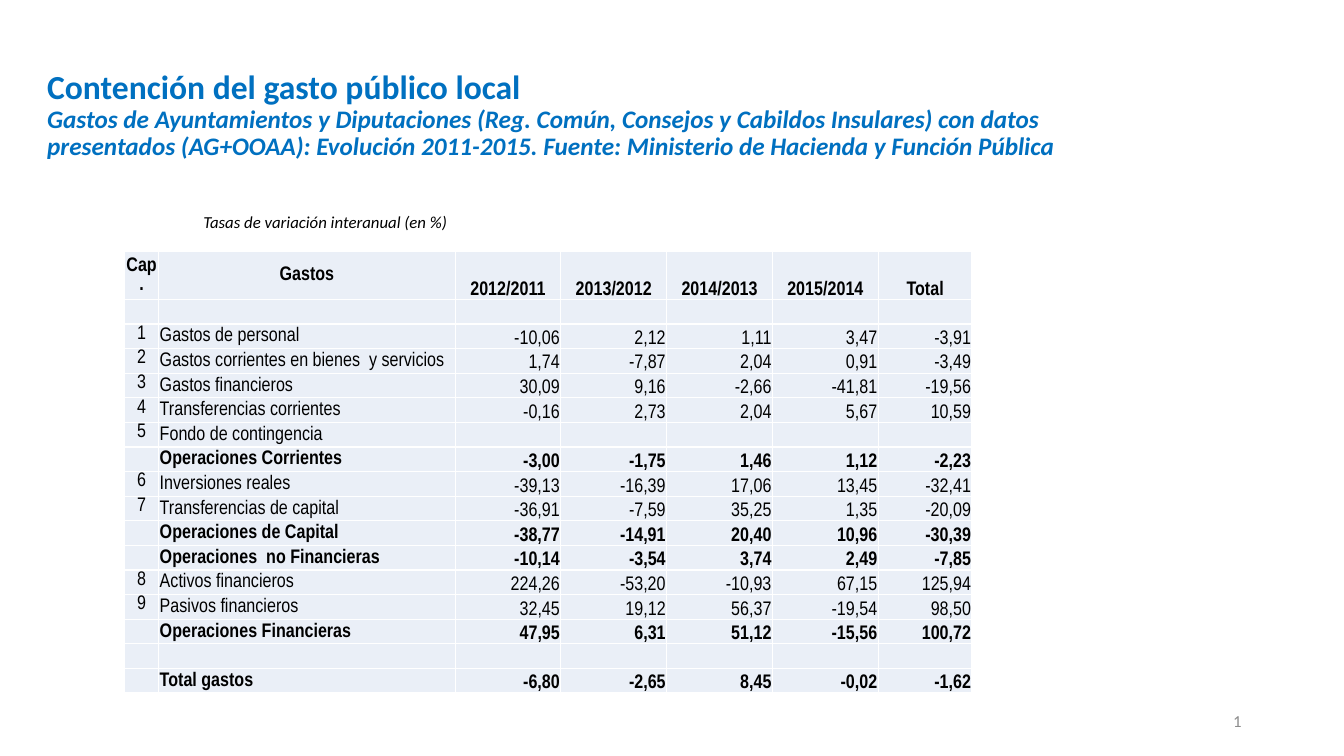
import pptx
import pptx.dml.color
import pptx.enum.text
import pptx.oxml
import pptx.oxml.ns
import pptx.util
from lxml import etree

Pt = pptx.util.Pt
RGBColor = pptx.dml.color.RGBColor
ALIGN = pptx.enum.text.PP_ALIGN
ANCHOR = pptx.enum.text.MSO_ANCHOR

BLUE = RGBColor(0x00, 0x70, 0xC0)
BLACK = RGBColor(0x00, 0x00, 0x00)
GREY = RGBColor(0x8C, 0x8C, 0x8C)
WHITE = RGBColor(0xFF, 0xFF, 0xFF)
PALE = RGBColor(0xEA, 0xEF, 0xF7)

TITLE = "Contención del gasto público local"
SUBTITLE = (
    "Gastos de Ayuntamientos y Diputaciones (Reg. Común, Consejos y Cabildos "
    "Insulares) con datos presentados (AG+OOAA): Evolución 2011-2015. "
    "Fuente: Ministerio de Hacienda y Función Pública"
)
HEADINGS = ["Cap.", "Gastos", "2012/2011", "2013/2012", "2014/2013", "2015/2014", "Total"]
BLANK = [""] * len(HEADINGS)
EXPENSES = [
    ["1", "Gastos de personal", "-10,06", "2,12", "1,11", "3,47", "-3,91"],
    ["2", "Gastos corrientes en bienes  y servicios", "1,74", "-7,87", "2,04", "0,91", "-3,49"],
    ["3", "Gastos financieros", "30,09", "9,16", "-2,66", "-41,81", "-19,56"],
    ["4", "Transferencias corrientes", "-0,16", "2,73", "2,04", "5,67", "10,59"],
    ["5", "Fondo de contingencia", "", "", "", "", ""],
    ["", "Operaciones Corrientes", "-3,00", "-1,75", "1,46", "1,12", "-2,23"],
    ["6", "Inversiones reales", "-39,13", "-16,39", "17,06", "13,45", "-32,41"],
    ["7", "Transferencias de capital", "-36,91", "-7,59", "35,25", "1,35", "-20,09"],
    ["", "Operaciones de Capital", "-38,77", "-14,91", "20,40", "10,96", "-30,39"],
    ["", "Operaciones  no Financieras", "-10,14", "-3,54", "3,74", "2,49", "-7,85"],
    ["8", "Activos financieros", "224,26", "-53,20", "-10,93", "67,15", "125,94"],
    ["9", "Pasivos financieros", "32,45", "19,12", "56,37", "-19,54", "98,50"],
    ["", "Operaciones Financieras", "47,95", "6,31", "51,12", "-15,56", "100,72"],
    BLANK,
    ["", "Total gastos", "-6,80", "-2,65", "8,45", "-0,02", "-1,62"],
]
COLUMN_WIDTHS = [24.5, 211.7, 75.6, 75.6, 75.6, 75.6, 67]
HEADER_HEIGHT, ROW_HEIGHT = 34, 17.6


class ReportSlide:
    text_font = "Calibri"
    table_font = "Arial Narrow"
    table_size = 14

    def __init__(self, slide):
        self.slide = slide

    def style(self, paragraph, font, color, size=None, bold=False, italic=None):
        paragraph.font.name = font
        paragraph.font.color.rgb = color
        paragraph.font.bold = bold
        paragraph.font.italic = italic
        if size:
            paragraph.font.size = Pt(size)

    def box(self, left, top, width, height, anchor=ANCHOR.TOP):
        frame = self.slide.shapes.add_textbox(Pt(left), Pt(top), Pt(width), Pt(height)).text_frame
        frame.word_wrap = True
        frame.vertical_anchor = anchor
        return frame.paragraphs[0]

    def title(self, heading, subtitle, *place):
        paragraph = self.box(*place)
        paragraph.line_spacing = 0.9
        self.style(paragraph, self.text_font, BLUE, bold=True)
        heading_run = paragraph.add_run()
        heading_run.text = heading
        heading_run.font.size = Pt(24)
        paragraph.add_line_break()
        subtitle_run = paragraph.add_run()
        subtitle_run.text = subtitle
        subtitle_run.font.size = Pt(18)
        subtitle_run.font.italic = True

    def label(self, text, *place, color=BLACK, align=ALIGN.LEFT, italic=None):
        paragraph = self.box(*place)
        paragraph.text = text
        paragraph.alignment = align
        self.style(paragraph, self.text_font, color, 12, italic=italic)

    def borders(self, cell):
        properties = cell._tc.get_or_add_tcPr()
        for position, side in enumerate(("lnL", "lnR", "lnT", "lnB")):
            line = etree.Element(pptx.oxml.ns.qn("a:" + side), w=str(Pt(1)))
            fill = etree.SubElement(line, pptx.oxml.ns.qn("a:solidFill"))
            etree.SubElement(fill, pptx.oxml.ns.qn("a:srgbClr"), val=str(WHITE))
            properties.insert(position, line)

    def cell(self, cell, text, align, anchor, bold):
        cell.margin_left = cell.margin_right = cell.margin_top = Pt(0.72)
        cell.margin_bottom = 0
        cell.vertical_anchor = anchor
        cell.fill.solid()
        cell.fill.fore_color.rgb = PALE
        self.borders(cell)
        paragraph = cell.text_frame.paragraphs[0]
        paragraph.alignment = align
        self.style(paragraph, self.table_font, BLACK, self.table_size, bold)
        if text:
            paragraph.text = text
        else:
            # An empty cell keeps the table's text size so its row stays low
            etree.SubElement(paragraph._p, pptx.oxml.ns.qn("a:endParaRPr"),
                             sz=str(self.table_size * 100))

    def table(self, headings, rows, left, top, widths, header_height, row_height):
        table = self.slide.shapes.add_table(
            len(rows) + 1, len(headings), Pt(left), Pt(top),
            Pt(sum(widths)), Pt(header_height + row_height * len(rows))).table
        table.first_row = table.horz_banding = False
        for column, width in zip(table.columns, widths):
            column.width = Pt(width)
        for number, row in enumerate([headings] + rows):
            is_header = number == 0
            table.rows[number].height = Pt(header_height if is_header else row_height)
            # Totals are the rows without a chapter number
            bold = is_header or not row[0]
            for column, text in enumerate(row):
                if column == 0:
                    align, anchor = ALIGN.CENTER, ANCHOR.MIDDLE if is_header else ANCHOR.TOP
                elif column == 1:
                    align, anchor = ALIGN.LEFT, ANCHOR.MIDDLE
                else:
                    align, anchor = ALIGN.RIGHT, ANCHOR.BOTTOM
                if is_header:
                    align = ALIGN.CENTER
                self.cell(table.cell(number, column), text, align, anchor, bold)


def main():
    presentation = pptx.Presentation()
    presentation.slide_width, presentation.slide_height = Pt(960), Pt(540)
    report = ReportSlide(presentation.slides.add_slide(presentation.slide_layouts[6]))

    # Slide number
    report.label("1", 678, 500.5, 216, 28.75, ANCHOR.MIDDLE, color=GREY, align=ALIGN.RIGHT)

    # Title and caption
    report.title(TITLE, SUBTITLE, 26.6, 46.8, 802, 75.6)
    report.label("Tasas de variación interanual (en %)", 138.2, 147.6, 191.5, 21.6, italic=True)

    # Expense table
    report.table(HEADINGS, [BLANK] + EXPENSES, 88.9, 179.5,
                 COLUMN_WIDTHS, HEADER_HEIGHT, ROW_HEIGHT)

    presentation.save("out.pptx")


if __name__ == "__main__":
    main()
